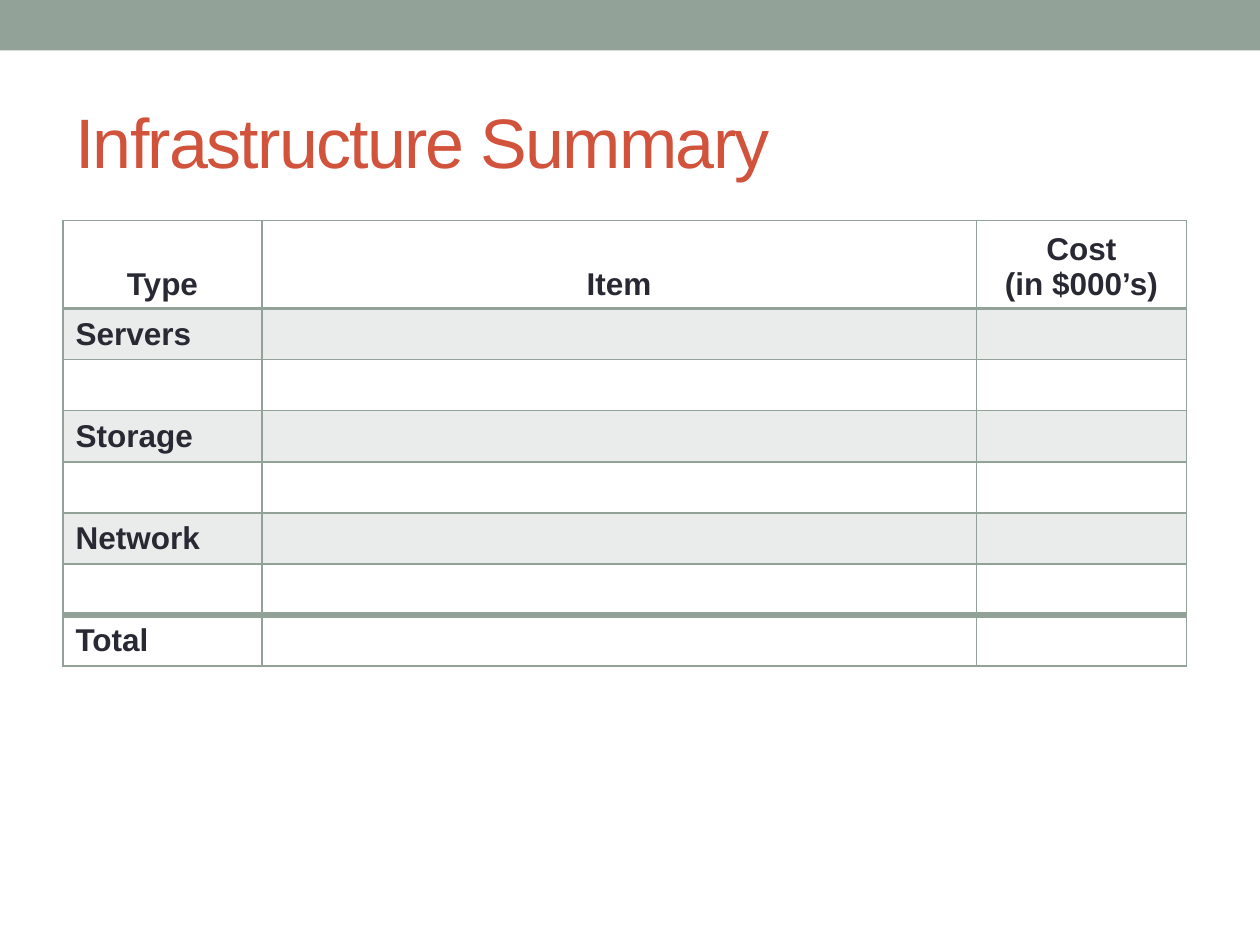
from dataclasses import dataclass

from lxml import etree
from pptx import Presentation
from pptx.dml.color import RGBColor
from pptx.enum import shapes, text
from pptx.oxml import ns
from pptx.util import Cm, Pt

SAGE = "93A299"
RUST = "D2533C"
INK = "292934"
FONT = "Arial"
HEADS = (("Type",), ("Item",), ("Cost", "(in $000’s)"))
WIDTHS = (4.01, 14.4, 4.24)
HEAD_H, ROW_H = 1.67, 1.03


@dataclass
class Row:
    label: str = ""
    tint: bool = False
    top: float = 1
    base: float = 1


ROWS = (
    Row("Servers", True, top=2), Row(),
    Row("Storage", True), Row(),
    Row("Network", True), Row(base=4),
    Row("Total", top=4),
)


def color(code: str) -> RGBColor:
    return RGBColor.from_string(code)


def add_run(para, words: str, size: float, code: str, bold: bool = False):
    run = para.add_run()
    run.text = words
    font = run.font
    font.name, font.size, font.bold = FONT, Pt(size), bold
    font.color.rgb = color(code)
    return run


def set_fill(cell, tint: bool) -> None:
    if not tint:
        cell.fill.background()
        return
    cell.fill.solid()
    cell.fill.fore_color.rgb = color(SAGE)
    shade = cell._tc.tcPr.find(".//" + ns.qn("a:srgbClr"))
    etree.SubElement(shade, ns.qn("a:alpha"), val="20000")


def set_edges(cell, top: float, base: float) -> None:
    sides = (("L", 1), ("R", 1), ("T", top), ("B", base))
    for spot, (side, width) in enumerate(sides):
        line = etree.Element(ns.qn("a:ln" + side), w=str(Pt(width)))
        fill = etree.SubElement(line, ns.qn("a:solidFill"))
        etree.SubElement(fill, ns.qn("a:srgbClr"), val=SAGE)
        cell._tc.tcPr.insert(spot, line)


def fill_cell(cell, lines: tuple[str, ...], row: Row, head: bool = False) -> None:
    anchor = text.MSO_ANCHOR
    cell.vertical_anchor = anchor.BOTTOM if head else anchor.MIDDLE
    para = cell.text_frame.paragraphs[0]
    para.font.size = Pt(18)
    para.alignment = text.PP_ALIGN.CENTER if head else text.PP_ALIGN.LEFT
    for spot, line in enumerate(lines):
        if spot:
            para.add_line_break()
        add_run(para, line, 18, INK, True)
    set_fill(cell, row.tint)
    set_edges(cell, row.top, row.base)


def add_band(slide) -> None:
    band = slide.shapes.add_shape(
        shapes.MSO_SHAPE.RECTANGLE, 0, 0, Cm(25.4), Cm(1.02))
    band.shadow.inherit = False
    band.fill.solid()
    band.fill.fore_color.rgb = color(SAGE)
    band.line.fill.background()


def add_title(slide) -> None:
    box = slide.shapes.add_textbox(Cm(1.27), Cm(1.47), Cm(22.86), Cm(2.74))
    frame = box.text_frame
    frame.word_wrap = True
    frame.vertical_anchor = text.MSO_ANCHOR.MIDDLE
    run = add_run(frame.paragraphs[0], "Infrastructure Summary", 40, RUST)
    run.font._element.set("spc", "-100")


def add_costs(slide) -> None:
    high = HEAD_H + ROW_H * len(ROWS)
    table = slide.shapes.add_table(
        len(ROWS) + 1, len(WIDTHS),
        Cm(1.27), Cm(4.44), Cm(sum(WIDTHS)), Cm(high)).table
    table.first_row = table.horz_banding = False
    for col, width in zip(table.columns, WIDTHS):
        col.width = Cm(width)
    for spot, row in enumerate(table.rows):
        row.height = Cm(ROW_H if spot else HEAD_H)
    for col, lines in enumerate(HEADS):
        fill_cell(table.cell(0, col), lines, Row(base=2), head=True)
    for spot, row in enumerate(ROWS, 1):
        for col in range(len(WIDTHS)):
            lines = (row.label,) if row.label and col == 0 else ()
            fill_cell(table.cell(spot, col), lines, row)


def main() -> None:
    deck = Presentation()
    deck.slide_width, deck.slide_height = Cm(25.4), Cm(19.05)
    slide = deck.slides.add_slide(deck.slide_layouts[6])
    add_band(slide)
    add_title(slide)
    add_costs(slide)
    deck.save("out.pptx")


if __name__ == "__main__":
    main()
